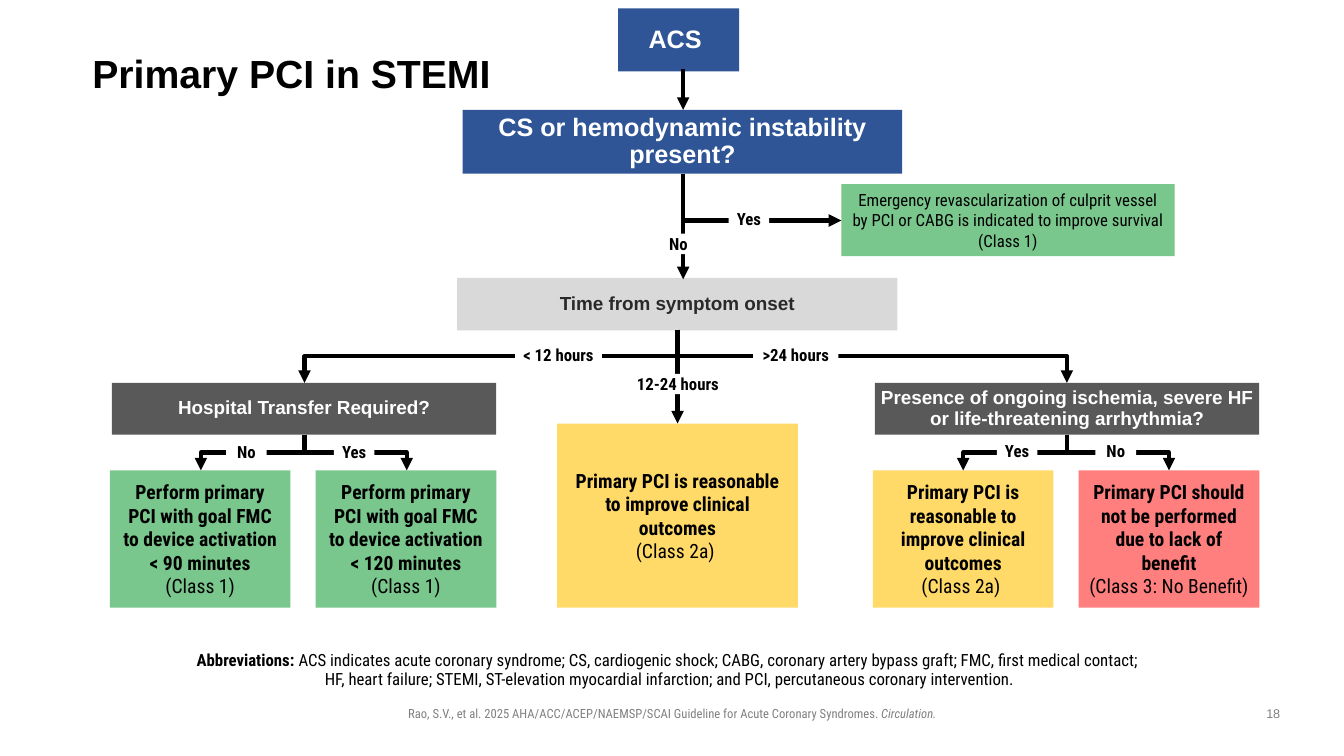
from dataclasses import dataclass

from pptx import Presentation
from pptx.dml.color import RGBColor as RGB
from pptx.enum.shapes import MSO_CONNECTOR as Link, MSO_SHAPE as Form
from pptx.enum.text import MSO_ANCHOR as Anchor, MSO_AUTO_SIZE as Fit, PP_ALIGN as Align
from pptx.oxml.ns import qn
from pptx.oxml.xmlchemy import OxmlElement as Node
from pptx.util import Pt

BLUE = RGB(0x2F, 0x55, 0x97)
GREEN = RGB(0x79, 0xC7, 0x8D)
YELLOW = RGB(0xFF, 0xDA, 0x68)
RED = RGB(0xFF, 0x7F, 0x7F)
DARK = RGB(0x59, 0x59, 0x59)
PALE = RGB(0xD9, 0xD9, 0xD9)
INK = RGB(0x29, 0x29, 0x29)
GRAY = RGB(0x80, 0x80, 0x80)
BLACK = RGB(0, 0, 0)
WHITE = RGB(0xFF, 0xFF, 0xFF)
SANS = "Arial"
SLIM = "Roboto Condensed"
BREAK = "\n"
NONE = (0, 0, 0, 0)
INSET = (7.2, 3.6, 7.2, 3.6)


@dataclass
class Run:
    text: str
    bold: bool = False
    italic: bool = False


@dataclass
class Box:
    left: float
    top: float
    width: float
    height: float
    fill: RGB
    runs: list[Run]
    size: float = 14
    font: str = SLIM
    color: RGB = BLACK
    pad: tuple = INSET
    space: float = 1


@dataclass
class Arrow:
    start: tuple
    end: tuple
    bends: int = 0


def write(frame, runs: list[Run], *, size: float, font: str = SLIM, color: RGB = BLACK,
          align=Align.CENTER, anchor=Anchor.MIDDLE, pad: tuple = INSET,
          space: float = 1) -> None:
    frame.word_wrap = True
    frame.auto_size = Fit.NONE
    frame.vertical_anchor = anchor
    (frame.margin_left, frame.margin_top,
     frame.margin_right, frame.margin_bottom) = (Pt(side) for side in pad)
    para = frame.paragraphs[0]
    para.alignment, para.line_spacing = align, space
    para.space_before = Pt(0)
    for part in runs:
        if part.text == BREAK:
            para.add_line_break()
            continue
        run = para.add_run()
        run.text = part.text
        face = run.font
        face.name, face.size, face.color.rgb = font, Pt(size), color
        face.bold, face.italic = part.bold, part.italic


def place(shape, left: float, top: float, width: float, height: float):
    shape.left, shape.top = Pt(left), Pt(top)
    shape.width, shape.height = Pt(width), Pt(height)
    return shape.text_frame


def draw_box(slide, box: Box) -> None:
    shape = slide.shapes.add_shape(Form.RECTANGLE, Pt(box.left), Pt(box.top),
                                   Pt(box.width), Pt(box.height))
    shape.shadow.inherit = False
    shape.fill.solid()
    shape.fill.fore_color.rgb = box.fill
    shape.line.fill.background()
    write(shape.text_frame, box.runs, size=box.size, font=box.font, color=box.color,
          pad=box.pad, space=box.space)


def draw_link(slide, arrow: Arrow) -> None:
    (x1, y1), (x2, y2) = arrow.start, arrow.end
    if arrow.bends:
        # A bent line that starts downwards is a turned one: swap its sides
        wide, high = abs(x2 - x1), y2 - y1
        left, top = (x1 + x2 - high) / 2, (y1 + y2 - wide) / 2
        line = slide.shapes.add_connector(Link.ELBOW, Pt(left), Pt(top),
                                          Pt(left + high), Pt(top + wide))
        props = line._element.spPr
        props.find(qn("a:prstGeom")).set("prst", f"bentConnector{arrow.bends + 1}")
        frame = props.find(qn("a:xfrm"))
        frame.set("rot", str((270 if x2 > x1 else 90) * 60000))
        if x2 > x1:
            frame.set("flipH", "1")
    else:
        line = slide.shapes.add_connector(Link.STRAIGHT, Pt(x1), Pt(y1), Pt(x2), Pt(y2))
    line.line.color.rgb = BLACK
    line.line.width = Pt(3)
    head = Node("a:tailEnd")
    head.set("type", "triangle")
    line.line._get_or_add_ln().append(head)
    line._element.spPr.append(Node("a:effectLst"))


def head_box(left: float, top: float, width: float, height: float, fill: RGB, text: str,
             size: float = 13.5, color: RGB = WHITE) -> Box:
    return Box(left, top, width, height, fill, [Run(text, True)], size, SANS, color, NONE, 0.9)


def leaf(left: float, fill: RGB, text: str, note: str, top: float = 336,
         width: float = 129, height: float = 98) -> Box:
    return Box(left, top, width, height, fill, [Run(text, True), Run(BREAK), Run(note)])


def label(left: float, top: float, text: str, width: float = 29) -> Box:
    return Box(left, top, width, 14.5, WHITE, [Run(text, True)], 12, pad=NONE)


def main() -> None:
    deck = Presentation()
    deck.slide_width, deck.slide_height = Pt(960), Pt(540)
    slide = deck.slides.add_slide(deck.slide_layouts[1])

    # Title and abbreviations
    title, body = slide.placeholders
    write(place(title, 66, 28.5, 719, 52), [Run("Primary PCI in STEMI", True)],
          size=28, font=SANS, align=Align.LEFT, pad=NONE, space=0.9)
    frame = place(body, 106, 462, 752, 33.5)
    props = frame.paragraphs[0]._p.get_or_add_pPr()
    props.set("marL", "0")
    props.set("indent", "0")
    props.append(Node("a:buNone"))
    write(frame, [
        Run("Abbreviations: ", True),
        Run("ACS indicates acute coronary syndrome; CS, cardiogenic shock; CABG, coronary "
            "artery bypass graft; FMC, first medical contact; "),
        Run(BREAK),
        Run("HF, heart failure; STEMI, ST-elevation myocardial infarction; and PCI, "
            "percutaneous coronary intervention."),
    ], size=12, anchor=Anchor.BOTTOM, pad=(0, 3.6, 7.2, 3.6), space=0.9)

    # Source line and page number
    cite = slide.shapes.add_textbox(0, 0, 0, 0)
    write(place(cite, 170, 500.5, 620.5, 18),
          [Run("Rao, S.V., et al. 2025 AHA/ACC/ACEP/NAEMSP/SCAI Guideline for Acute "
               "Coronary Syndromes. "), Run("Circulation.", italic=True)],
          size=9, color=GRAY, anchor=Anchor.TOP)
    page = slide.shapes.add_textbox(0, 0, 0, 0)
    write(place(page, 894.5, 500.5, 30, 18.5), [Run("18")], size=9, font=SANS,
          color=GRAY, anchor=Anchor.TOP)

    # Questions and advice
    goal = "Perform primary PCI with goal FMC to device activation < {} minutes"
    fair = "Primary PCI is reasonable to improve clinical outcomes"
    boxes = [
        head_box(441.5, 6, 86.5, 45, BLUE, "ACS ", 18),
        head_box(330.5, 78.5, 314, 45.5, BLUE, "CS or hemodynamic instability present?", 18),
        head_box(326.5, 198.5, 314.5, 37.5, PALE, "Time from symptom onset", color=INK),
        head_box(80, 273.5, 274.5, 37, DARK, "Hospital Transfer Required?"),
        head_box(625, 273.5, 274.5, 37, DARK,
                 "Presence of ongoing ischemia, severe HF or life-threatening arrhythmia?"),
        Box(601, 131.5, 238, 51.5, GREEN,
            [Run("Emergency revascularization of culprit vessel by PCI or CABG is indicated "
                 "to improve survival (Class 1)")], 12),
        leaf(78.5, GREEN, goal.format(90), "(Class 1)"),
        leaf(225.5, GREEN, goal.format(120), "(Class 1)"),
        leaf(398, YELLOW, fair, "(Class 2a) ", 302.5, 172, 131.5),
        leaf(623.5, YELLOW, fair, "(Class 2a) "),
        leaf(770.5, RED, "Primary PCI should not be performed due to lack of benefit",
             "(Class 3: No Benefit)"),
    ]
    for box in boxes:
        draw_box(slide, box)

    # Arrows
    stem, fork = (488, 124), (484, 235.5)
    links = [
        Arrow((488, 49), (488, 78.5)),
        Arrow(stem, (601, 157.5), 1),
        Arrow(stem, (488, 199.5)),
        Arrow(fork, (484, 302.5)),
    ]
    for hub in (217.5, 762):
        links.append(Arrow(fork, (hub, 273.5), 2))
        links += [Arrow((hub, 310.5), (hub + side, 336), 2) for side in (-74, 73)]
    for arrow in links:
        draw_link(slide, arrow)

    # Answers on the arrows
    answers = [
        label(520.5, 149, "Yes"), label(470, 167, "No"),
        label(161.5, 315.5, "No"), label(238.5, 315.5, "Yes"),
        label(712, 314.5, "Yes"), label(782.5, 314.5, "No"),
        label(368, 246.5, "< 12 hours", 62), label(538, 246.5, ">24 hours", 61),
        label(437, 267, "12-24 hours", 94.5),
    ]
    for answer in answers:
        draw_box(slide, answer)

    deck.save("out.pptx")


if __name__ == "__main__":
    main()
